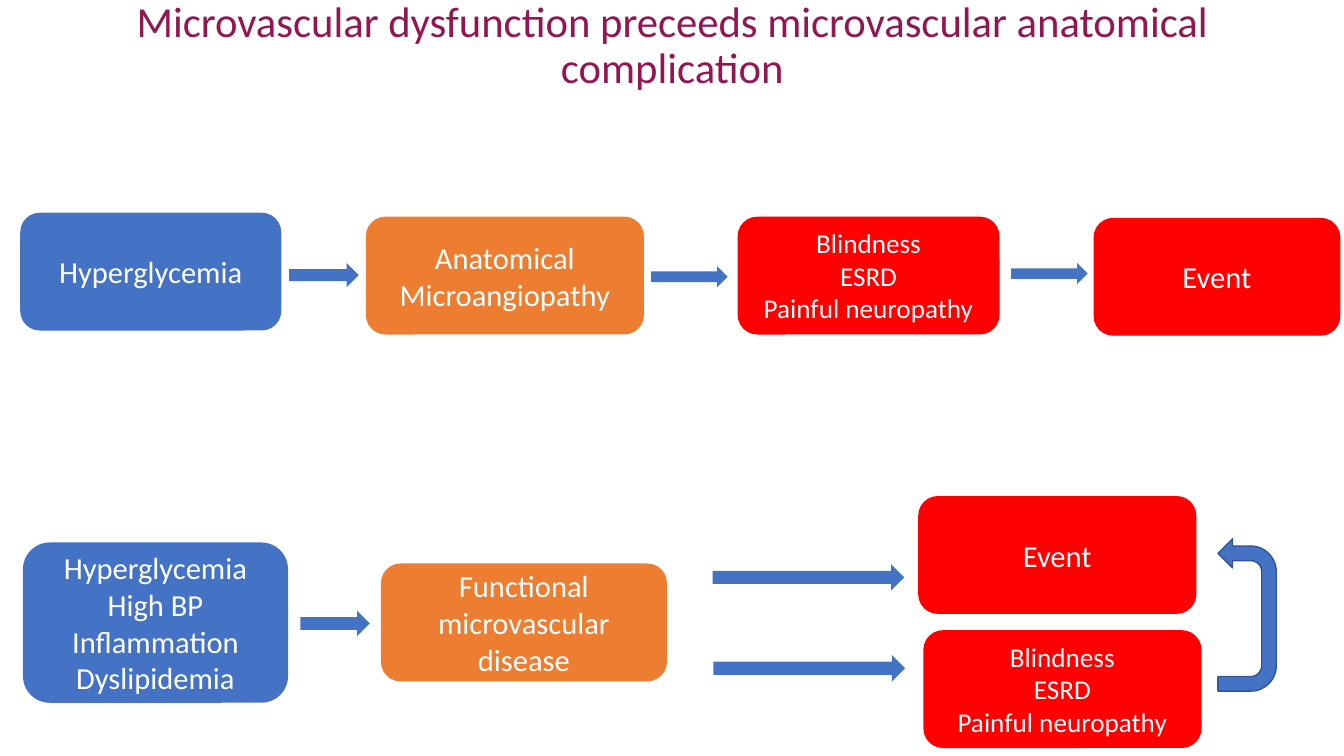
from pptx import Presentation
from pptx.dml.color import RGBColor
from pptx.enum.shapes import MSO_SHAPE
from pptx.enum.text import MSO_ANCHOR, MSO_AUTO_SIZE, PP_ALIGN
from pptx.util import Cm, Pt

BLUE, ORANGE, RED = "4472C4", "ED7D31", "FF0000"
COMPLICATIONS = "Blindness\nESRD\nPainful neuropathy"


def write(shape, text, size, color):
    tf = shape.text_frame
    tf.text = text
    tf.word_wrap = True
    tf.auto_size = MSO_AUTO_SIZE.NONE
    tf.vertical_anchor = MSO_ANCHOR.MIDDLE
    for p in tf.paragraphs:
        p.alignment = PP_ALIGN.CENTER
        p.font.name = "Calibri"
        p.font.size = Pt(size)
        p.font.color.rgb = RGBColor.from_string(color)


def add_filled(kind, left, top, width, height, color):
    sp = s.shapes.add_shape(kind, Cm(left), Cm(top), Cm(width), Cm(height))
    sp.shadow.inherit = False
    sp.fill.solid()
    sp.fill.fore_color.rgb = RGBColor.from_string(color)
    sp.line.fill.background()
    return sp


prs = Presentation()
prs.slide_width, prs.slide_height = Cm(33.87), Cm(19.05)
s = prs.slides.add_slide(prs.slide_layouts[5])

title = s.shapes.title
title.left, title.top, title.width, title.height = Cm(1.7), Cm(0.38), Cm(30.48), Cm(1.57)
write(title, "Microvascular dysfunction preceeds microvascular anatomical complication", 30.5, "941651")
title.text_frame.paragraphs[0].line_spacing = 0.9

boxes = [
    ("Hyperglycemia", 0.51, 5.36, 6.58, 2.97, BLUE, 21.8),
    ("Anatomical\nMicroangiopathy", 9.22, 5.46, 7.01, 2.97, ORANGE, 21.8),
    (COMPLICATIONS, 18.59, 5.46, 6.6, 2.97, RED, 19.4),
    ("Event", 27.56, 5.49, 6.22, 2.97, RED, 21.8),
    ("Hyperglycemia\nHigh BP\nInflammation\nDyslipidemia", 0.58, 13.67, 6.68, 4.04, BLUE, 21.8),
    ("Functional microvascular disease", 9.6, 14.2, 7.21, 2.97, ORANGE, 21.8),
    ("Event", 23.14, 12.5, 7.01, 2.97, RED, 21.8),
    (COMPLICATIONS, 23.27, 15.88, 7.01, 2.97, RED, 19.4),
]
for text, left, top, width, height, color, size in boxes:
    sp = add_filled(MSO_SHAPE.ROUNDED_RECTANGLE, left, top, width, height, color)
    write(sp, text, size, "FFFFFF")

arrows = [
    (7.29, 6.63, 1.75, 0.61),
    (16.41, 6.71, 1.93, 0.53),
    (25.48, 6.63, 1.93, 0.53),
    (7.57, 15.39, 1.75, 0.64),
    (17.96, 14.22, 4.83, 0.66),
    (17.98, 16.51, 4.83, 0.66),
]
for left, top, width, height in arrows:
    add_filled(MSO_SHAPE.RIGHT_ARROW, left, top, width, height, BLUE)

uturn = add_filled(MSO_SHAPE.U_TURN_ARROW, 29.51, 14.76, 3.84, 1.47, BLUE)
for i, value in enumerate([0.25, 0.25, 0.25, 0.438, 1]):
    uturn.adjustments[i] = value
uturn.rotation = 90
uturn._element.spPr.xfrm.set("flipH", "1")
uturn.line.color.rgb = RGBColor.from_string("325491")
uturn.line.width = Pt(1)

prs.save("out.pptx")
